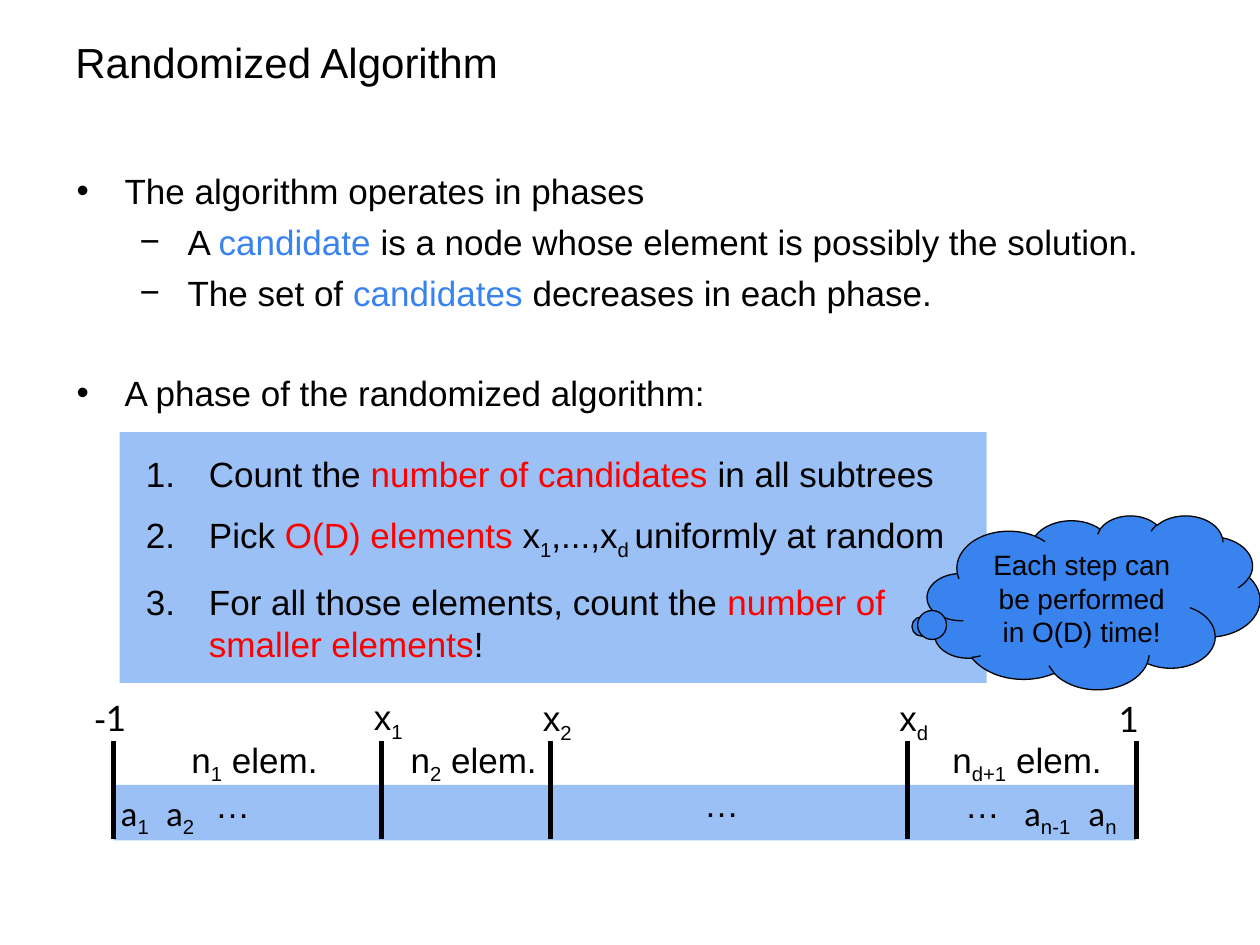
from typing import NamedTuple

from lxml import etree
from pptx import Presentation
from pptx.dml.color import RGBColor
from pptx.enum.shapes import MSO_CONNECTOR, MSO_SHAPE
from pptx.enum.text import MSO_ANCHOR, MSO_AUTO_SIZE, PP_ALIGN
from pptx.oxml.ns import qn
from pptx.util import Emu, Pt

RECT, CLOUD = MSO_SHAPE.RECTANGLE, MSO_SHAPE.CLOUD_CALLOUT
STRAIGHT = MSO_CONNECTOR.STRAIGHT
TOP, MIDDLE = MSO_ANCHOR.TOP, MSO_ANCHOR.MIDDLE
CENTER = PP_ALIGN.CENTER
FIT_SHAPE = MSO_AUTO_SIZE.SHAPE_TO_FIT_TEXT

BLACK, BLUE, RED = "000000", "3983EF", "FF0000"
PX = 9144  # 100 px to the inch


class Run(NamedTuple):
    text: str
    color: str = BLACK
    font: str = "Arial"
    sub: bool = False


class Item(NamedTuple):
    runs: list[Run]
    bullet: str  # a character, or "auto" for numbering
    left: int
    hang: int
    before: int = 0
    level: int = 0


class Label(NamedTuple):
    x: int
    y: int
    w: int
    runs: list[Run]
    wrap: bool = False


def px(n: int) -> Emu:
    return Emu(n * PX)


def rgb(color: str) -> RGBColor:
    return RGBColor.from_string(color)


def sub(text: str) -> Run:
    return Run(text, sub=True)


def add_runs(p, runs: list[Run], size: int = 20) -> None:
    for run in runs:
        for i, part in enumerate(run.text.split("\n")):
            if i:
                p.add_line_break()
            r = p.add_run()
            r.text = part
            r.font.size = Pt(size)
            r.font.name = run.font
            r.font.color.rgb = rgb(run.color)
            if run.sub:
                r.font._element.set("baseline", "-25000")


def add_box(s, x: int, y: int, w: int, h: int, wrap: bool = True):
    tf = s.shapes.add_textbox(px(x), px(y), px(w), px(h)).text_frame
    tf.word_wrap = wrap
    return tf


def add_list(s, x: int, y: int, w: int, h: int, items: list[Item]) -> None:
    tf = add_box(s, x, y, w, h)
    for i, item in enumerate(items):
        p = tf.add_paragraph() if i else tf.paragraphs[0]
        p.level = item.level
        p.space_before = Pt(item.before)
        pPr = p._p.get_or_add_pPr()
        pPr.set("marL", str(px(item.left)))
        pPr.set("indent", str(-px(item.hang)))
        if item.bullet == "auto":
            etree.SubElement(pPr, qn("a:buAutoNum"), type="arabicPeriod")
        else:
            etree.SubElement(pPr, qn("a:buFont"), typeface="Arial")
            etree.SubElement(pPr, qn("a:buChar"), char=item.bullet)
        add_runs(p, item.runs)


def add_panel(s, x: int, y: int, w: int, h: int) -> None:
    sp = s.shapes.add_shape(RECT, px(x), px(y), px(w), px(h))
    sp.shadow.inherit = False
    sp.fill.solid()
    sp.fill.fore_color.rgb = rgb(BLUE)
    sp.line.fill.background()
    clr = sp._element.spPr.find(qn("a:solidFill")).find(qn("a:srgbClr"))
    etree.SubElement(clr, qn("a:alpha"), val="50000")


def add_tick(s, x: int, bottom: int, top: int) -> None:
    line = s.shapes.add_connector(STRAIGHT, px(x), px(bottom), px(x), px(top))
    line.line.color.rgb = rgb(BLACK)
    line.line.width = Pt(3)
    etree.SubElement(line._element.spPr, qn("a:effectLst"))


def add_label(s, label: Label) -> None:
    tf = add_box(s, label.x, label.y, label.w, 44, label.wrap)
    tf.auto_size = FIT_SHAPE
    add_runs(tf.paragraphs[0], label.runs)


def add_cloud(s, x: int, y: int, w: int, h: int, text: str) -> None:
    sp = s.shapes.add_shape(CLOUD, px(x), px(y), px(w), px(h))
    sp.shadow.inherit = False
    sp.adjustments[0], sp.adjustments[1] = -0.52, 0.14
    sp.fill.solid()
    sp.fill.fore_color.rgb = rgb(BLUE)
    sp.line.color.rgb = rgb(BLACK)
    sp.line.width = Pt(0.75)
    tf = sp.text_frame
    tf.word_wrap = True
    tf.vertical_anchor = TOP
    p = tf.paragraphs[0]
    p.alignment = CENTER
    add_runs(p, [Run(text)], 16)


def variable(font: str, name: str, index: str) -> list[Run]:
    return [Run(name, font=font), sub(index)]


def count(index: str) -> list[Run]:
    return [Run("n"), sub(index), Run(" elem.")]


DOTS = [Run("…")]
EDGES = [90, 303, 437, 720, 902]
LABELS = [
    # Interval bounds
    Label(65, 548, 57, [Run("-"), Run("1", font="Lato")]),
    Label(878, 549, 48, [Run("1", font="Lato")]),
    Label(287, 547, 44, variable("Arial", "x", "1")),
    Label(421, 548, 44, variable("Arial", "x", "2")),
    Label(704, 548, 44, variable("Arial", "x", "d")),
    # Elements per interval
    Label(142, 581, 122, count("1")),
    Label(316, 581, 122, count("2")),
    Label(746, 581, 143, count("d+1")),
    # Sorted elements
    Label(86, 623, 52, variable("Calibri", "a", "1")),
    Label(122, 623, 52, variable("Calibri", "a", "2")),
    Label(803, 623, 69, variable("Calibri", "a", "n-1")),
    Label(854, 623, 52, variable("Calibri", "a", "n")),
    Label(756, 617, 64, DOTS, True),
    Label(161, 617, 64, DOTS, True),
    Label(549, 616, 64, DOTS, True),
]
POINTS = [
    Item([Run("The algorithm operates in phases")], "•", 38, 38),
    Item([Run("A "), Run("candidate", BLUE),
          Run(" is a node whose element is possibly the solution.")],
         "−", 88, 38, 5, 1),
    Item([Run("The set of "), Run("candidates", BLUE),
          Run(" decreases in each phase.")], "−", 88, 38, 5, 1),
    Item([Run("A phase of the randomized algorithm:")], "•", 38, 38, 33),
]
STEPS = [
    Item([Run("Count the "), Run("number of candidates", RED),
          Run(" in all subtrees")], "auto", 50, 50),
    Item([Run("Pick "), Run("O(D) elements", RED), Run(" x"), sub("1"),
          Run(",...,x"), sub("d "), Run("uniformly at random")],
         "auto", 50, 50, 11),
    Item([Run("For all those elements, count the "),
          Run("number of \nsmaller elements", RED), Run("!")],
         "auto", 50, 50, 11),
]


def main() -> None:
    prs = Presentation()
    prs.slide_width, prs.slide_height = px(1000), px(750)
    s = prs.slides.add_slide(prs.slide_layouts[6])

    # Title
    tf = add_box(s, 50, 22, 900, 54)
    tf.vertical_anchor = MIDDLE
    add_runs(tf.paragraphs[0], [Run("Randomized Algorithm")], 24)

    # Number line
    for left, right in zip(EDGES, EDGES[1:]):
        add_panel(s, left, 623, right - left, 44)
    for x in EDGES:
        add_tick(s, x, 666, 588)
    for label in LABELS:
        add_label(s, label)

    # Bullets and numbered steps
    add_list(s, 51, 130, 898, 210, POINTS)
    add_panel(s, 95, 343, 688, 199)
    add_list(s, 106, 354, 664, 188, STEPS)

    # Remark
    add_cloud(s, 736, 409, 264, 138, "Each step can be performed in O(D) time!")

    prs.save("out.pptx")


if __name__ == "__main__":
    main()
